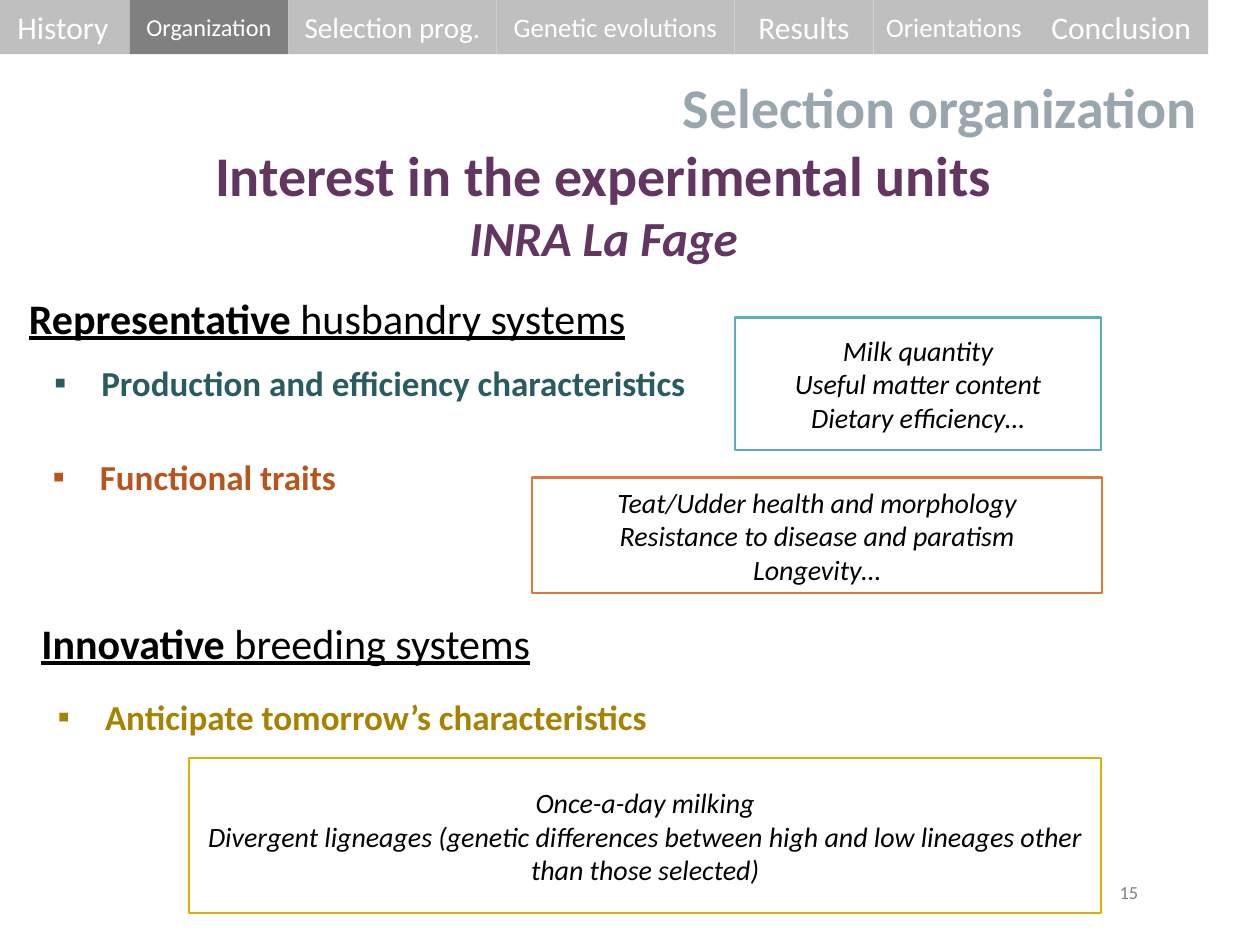
"""Build the slide on selection organization and experimental units."""
from pptx import Presentation
from pptx.dml.color import RGBColor
from pptx.enum import shapes, text
from pptx.oxml import parse_xml
from pptx.oxml.ns import nsdecls
from pptx.util import Pt

WHITE = RGBColor(0xFF, 0xFF, 0xFF)
BLACK = RGBColor(0, 0, 0)
SILVER = RGBColor(0xBF, 0xBF, 0xBF)
GREY = RGBColor(0x80, 0x80, 0x80)
SLATE = RGBColor(0x99, 0xA6, 0xAE)
PLUM = RGBColor(0x63, 0x36, 0x61)
PINE = RGBColor(0x29, 0x5B, 0x60)
RUST = RGBColor(0xB8, 0x55, 0x1D)
OLIVE = RGBColor(0xA6, 0x82, 0x00)
TEAL = RGBColor(0x59, 0xB0, 0xB9)
ORANGE = RGBColor(0xE0, 0x77, 0x3C)
GOLD = RGBColor(0xDE, 0xAE, 0x00)

LEFT, MID, RIGHT = (text.PP_ALIGN.LEFT, text.PP_ALIGN.CENTER,
                    text.PP_ALIGN.RIGHT)
TOP, CORE = text.MSO_ANCHOR.TOP, text.MSO_ANCHOR.MIDDLE

HEADS = [
    ((9.4, 163.4, 359.3, 36), "Representative", " husbandry systems"),
    ((16.6, 349.2, 348.5, 36), "Innovative", " breeding systems"),
]
POINTS = [
    ((23.8, 203, 379.4, 31.7), "Production and efficiency characteristics",
     PINE),
    ((23, 257, 177.8, 31.7), "Functional traits", RUST),
    ((25.9, 393.8, 354.2, 31.7), "Anticipate tomorrow’s characteristics",
     OLIVE),
]
TITLE = [
    ("Selection organization", RIGHT, dict(size=Pt(32), bold=True), SLATE),
    ("Interest in the experimental units", MID,
     dict(size=Pt(32), bold=True), PLUM),
    ("INRA La Fage", MID, dict(size=Pt(28), bold=True, italic=True), PLUM),
]
NOTES = [
    ((419.8, 181.4, 209.5, 75.6), TEAL,
     ["Milk quantity", "Useful matter content", "Dietary efficiency…"]),
    ((304.2, 272.9, 325.4, 66.2), ORANGE,
     ["Teat/Udder health and morphology",
      "Resistance to disease and paratism", "Longevity…"]),
    ((108, 433.4, 521.3, 88.6), GOLD,
     ["Once-a-day milking",
      "Divergent ligneages (genetic differences between high and low "
      "lineages other than those selected)"]),
]
TABS = [
    ("History", 76.3, 18), ("Organization", 90.7, 13.9),
    ("Selection prog.", 118.8, 16.6), ("Genetic evolutions", 136.1, 15.3),
    ("Results", 79.6, 18), ("Orientations", 91.7, 15.3),
    ("Conclusion", 99.4, 18),
]
ACTIVE = "Organization"

deck = Presentation()
deck.slide_width, deck.slide_height = Pt(720), Pt(540)
slide = deck.slides.add_slide(deck.slide_layouts[6])


def style(para, words, color, **form):
    run = para.add_run()
    run.text = words
    run.font.name = "Calibri"
    run.font.color.rgb = color
    for key, value in form.items():
        setattr(run.font, key, value)


def write(shape, rows, anchor=TOP, inset=7.2):
    frame = shape.text_frame
    form = dict(word_wrap=True, vertical_anchor=anchor,
                margin_left=Pt(inset), margin_right=Pt(inset),
                margin_top=Pt(inset / 2), margin_bottom=Pt(inset / 2))
    for key, value in form.items():
        setattr(frame, key, value)
    for num, (align, runs) in enumerate(rows):
        para = frame.add_paragraph() if num else frame.paragraphs[0]
        para.alignment = align
        for words, color, look in runs:
            style(para, words, color, **look)
    return frame


def label(box, rows, **form):
    shape = slide.shapes.add_textbox(*map(Pt, box))
    return write(shape, rows, **form)


def panel(box, fill, rows, edge=None, **form):
    shape = slide.shapes.add_shape(shapes.MSO_SHAPE.RECTANGLE, *map(Pt, box))
    shape.shadow.inherit = False
    shape.fill.solid()
    shape.fill.fore_color.rgb = fill
    if edge is None:
        shape.line.fill.background()
    else:
        shape.line.color.rgb = edge
        shape.line.width = Pt(1.25)
    write(shape, rows, anchor=CORE, **form)


def bullet(para):
    props = para._p.get_or_add_pPr()
    props.set("marL", str(Pt(27)))
    props.set("indent", str(-Pt(27)))
    for tag in ('buFont {} typeface="Wingdings"', 'buChar {} char="▪"'):
        tag = tag.replace("Wingdings", "Arial").format(nsdecls("a"))
        props.append(parse_xml(f"<a:{tag}/>"))


for box, strong, rest in HEADS:
    look = dict(size=Pt(24), underline=True)
    label(box, [(LEFT, [(strong, BLACK, dict(look, bold=True)),
                        (rest, BLACK, look)])])

for box, words, color in POINTS:
    look = dict(size=Pt(20), bold=True)
    frame = label(box, [(LEFT, [(words, color, look)])])
    bullet(frame.paragraphs[0])

label((-1.4, 31.7, 692.6, 130.3),
      [(align, [(words, color, look)]) for words, align, look, color in TITLE],
      anchor=CORE)
label((624.2, 504, 41.8, 12.2), [(MID, [("15", GREY, dict(size=Pt(10.5)))])],
      anchor=CORE, inset=0)

for box, edge, lines in NOTES:
    look = dict(size=Pt(16), italic=True)
    panel(box, WHITE, [(MID, [(line, BLACK, look)]) for line in lines], edge)

left = -2.2
for words, width, size in TABS:
    panel((left, -0.7, width, 31.7), GREY if words == ACTIVE else SILVER,
          [(MID, [(words, WHITE, dict(size=Pt(size)))])], inset=0)
    left += width

deck.save("out.pptx")
